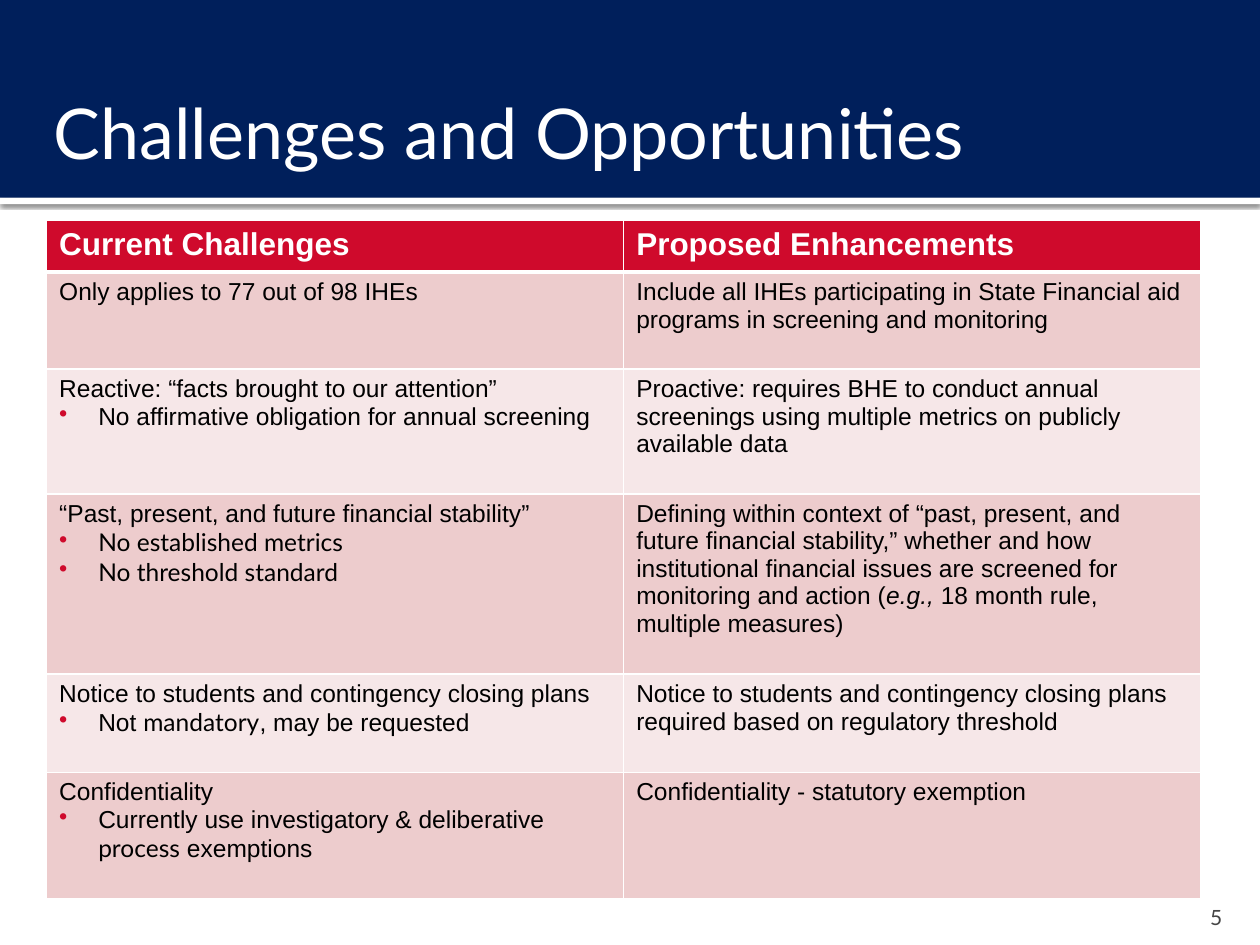
import pptx
import pptx.util
import pptx.oxml
import pptx.oxml.ns
import pptx.dml.color
import pptx.enum.shapes
import pptx.enum.text
from lxml import etree

Inches, Pt = pptx.util.Inches, pptx.util.Pt
RGB = pptx.dml.color.RGBColor.from_string
qn = pptx.oxml.ns.qn
PP_ALIGN, ANCHOR = pptx.enum.text.PP_ALIGN, pptx.enum.text.MSO_ANCHOR

COLORS = {"navy": "001F5B", "red": "CF0A2C", "rose": "EDCCCD", "pale": "F6E7E8",
          "white": "FFFFFF", "black": "000000", "gray": "454545"}

prs = pptx.Presentation()
prs.slide_width, prs.slide_height = Inches(10), Inches(7.5)
s = prs.slides.add_slide(prs.slide_layouts[6])


def add_sub(parent, tag, **attrs):
    return etree.SubElement(parent, qn(tag), {k: str(v) for k, v in attrs.items()})


def add_label(text, box, margins, anchor, align, size, color):
    tf = s.shapes.add_textbox(*map(Inches, box)).text_frame
    tf.word_wrap = True
    tf.vertical_anchor = anchor
    tf.margin_left, tf.margin_top, tf.margin_right, tf.margin_bottom = map(Inches, margins)
    p = tf.paragraphs[0]
    p.text, p.alignment = text, align
    p.font.name, p.font.size = "Lato", Pt(size)
    p.font.color.rgb = RGB(COLORS[color])


# Header band above a white strip that casts a soft shadow
for top, height, color in [(1.57, 0.05, "white"), (0, 1.57, "navy")]:
    sp = s.shapes.add_shape(pptx.enum.shapes.MSO_SHAPE.RECTANGLE,
                            0, Inches(top), prs.slide_width, Inches(height))
    sp.shadow.inherit = False
    sp.fill.solid()
    sp.fill.fore_color.rgb = RGB(COLORS[color])
    sp.line.fill.background()
    if color == "white":
        effects = sp._element.spPr.find(qn("a:effectLst"))
        shadow = add_sub(effects, "a:outerShdw", blurRad=Pt(2.5), dist=Pt(0.8),
                         dir=90 * 60000, algn="t", rotWithShape=0)
        add_sub(add_sub(shadow, "a:srgbClr", val=COLORS["black"]), "a:alpha", val=60000)

# Page number and title
add_label("5", (9, 7.08, 0.8, 0.3), (0.1, 0.05, 0.1, 0), ANCHOR.BOTTOM,
          PP_ALIGN.RIGHT, 12, "gray")
add_label("Challenges and Opportunities", (0.33, 0.58, 9, 0.92), (0.1, 0.05, 0.05, 0.05),
          ANCHOR.MIDDLE, PP_ALIGN.LEFT, 40, "white")

# Table content: each cell is a list of paragraphs, each paragraph a list of runs;
# a run is (text, style), and paragraphs after the first are bullets
rows = [
    (0.41, [[("Current Challenges", "")]], [[("Proposed Enhancements", "")]]),
    (0.77, [[("Only applies to 77 out of 98 IHEs", "")]],
     [[("Include all IHEs participating in State Financial aid programs in screening "
        "and monitoring", "")]]),
    (0.99, [[("Reactive: “facts brought to our attention”", "")],
            [("No affirmative obligation for annual screening", "")]],
     [[("Proactive: requires BHE to conduct annual screenings using multiple metrics on "
        "publicly available data", "")]]),
    (1.43, [[("“Past, present, and future financial stability”", "")],
            [("No established metrics", "lato")],
            [("No threshold standard", "lato")]],
     [[("Defining within context of “past, present, and future financial stability,” "
        "whether and how institutional financial issues are screened for monitoring and "
        "action (", ""), ("e.g.,", "italic"), (" 18 month rule, multiple measures)", "")]]),
    (0.78, [[("Notice to students and contingency closing plans", "")],
            [("Not ", ""), ("mandatory", "lato"), (", may be requested", "")]],
     [[("Notice to students and contingency closing plans required based on regulatory "
        "threshold", "")]]),
    (1.0, [[("Confidentiality", "")],
           [("Currently use investigatory & deliberative ", ""), ("process", "lato"),
            (" exemptions", "")]],
     [[("Confidentiality - statutory exemption", "")]]),
]

# Table
table = s.shapes.add_table(len(rows), 2, Inches(0.37), Inches(1.75), Inches(9.17),
                           Inches(sum(row[0] for row in rows))).table
for col in table.columns:
    col.width = Inches(4.58)

for i, (height, *cells) in enumerate(rows):
    header = i == 0
    table.rows[i].height = Inches(height)
    for j, paragraphs in enumerate(cells):
        cell = table.cell(i, j)

        # White borders, heavier between header and body
        tcPr = cell._tc.get_or_add_tcPr()
        for side in ("L", "R", "T", "B"):
            heavy = (header and side == "B") or (i == 1 and side == "T")
            ln = add_sub(tcPr, f"a:ln{side}", w=Pt(3 if heavy else 1))
            add_sub(add_sub(ln, "a:solidFill"), "a:srgbClr", val=COLORS["white"])
        cell.fill.solid()
        cell.fill.fore_color.rgb = RGB(
            COLORS["red" if header else "rose" if i % 2 else "pale"])

        tf = cell.text_frame
        for k, runs in enumerate(paragraphs):
            p = tf.add_paragraph() if k else tf.paragraphs[0]
            p.font.size = Pt(18 if header else 14)
            p.font.bold = header
            p.font.color.rgb = RGB(COLORS["white" if header else "black"])
            if k:
                pPr = p._p.get_or_add_pPr()
                pPr.set("marL", str(Inches(0.31)))
                pPr.set("indent", str(-Inches(0.31)))
                bullet_color = pptx.oxml.parse_xml(
                    f'<a:buClr {pptx.oxml.ns.nsdecls("a")}>'
                    f'<a:srgbClr val="{COLORS["red"]}"/></a:buClr>')
                pPr.insert(0, bullet_color)
                bullet = etree.Element(qn("a:buChar"), {"char": "•"})
                bullet_color.addnext(bullet)
            for text, style in runs:
                r = p.add_run()
                r.text = text
                r.font.name = "Lato" if style == "lato" else "Arial"
                if style == "italic":
                    r.font.italic = True

prs.save("out.pptx")
